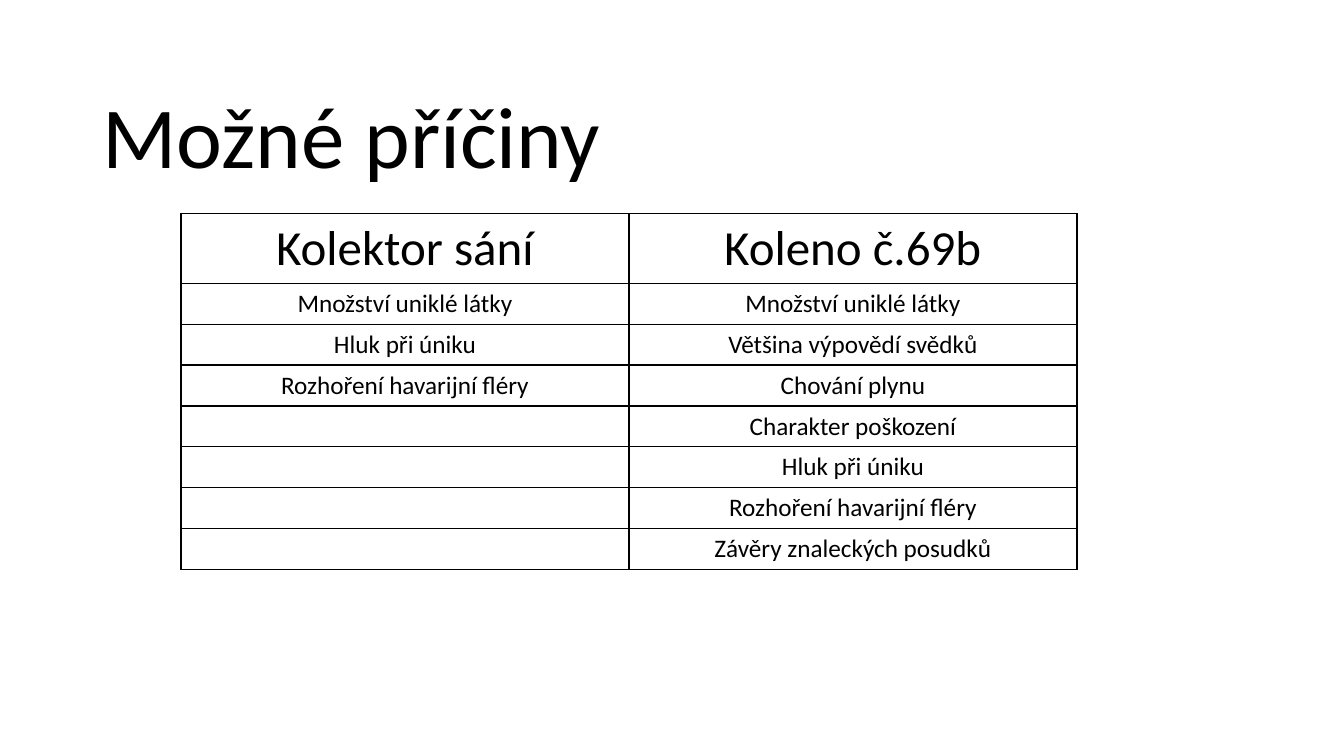
from itertools import zip_longest

from lxml.etree import SubElement
from pptx import Presentation
from pptx.dml.color import RGBColor
from pptx.enum.text import MSO_ANCHOR, MSO_AUTO_SIZE, PP_ALIGN
from pptx.oxml.ns import qn
from pptx.util import Pt

COLORS = {"text": "000000", "border": "000000", "cell": "FFFFFF"}

CAUSES = {
    "Kolektor sání": [
        "Množství uniklé látky",
        "Hluk při úniku",
        "Rozhoření havarijní fléry",
    ],
    "Koleno č.69b": [
        "Množství uniklé látky",
        "Většina výpovědí svědků",
        "Chování plynu",
        "Charakter poškození",
        "Hluk při úniku",
        "Rozhoření havarijní fléry",
        "Závěry znaleckých posudků",
    ],
}


class SlideBuilder:
    font_name = "Calibri"
    title_size = 62.1
    heading_size = 35
    body_size = 18
    border_width = 1

    def __init__(self, slide):
        self.slide = slide

    def format_text(self, paragraph, size, alignment):
        paragraph.alignment = alignment
        for font in [paragraph.font] + [run.font for run in paragraph.runs]:
            font.name = self.font_name
            font.size = Pt(size)
            font.color.rgb = RGBColor.from_string(COLORS["text"])

    def title(self, wording, left, top, width, height):
        heading = self.slide.shapes.title
        heading.left, heading.top = Pt(left), Pt(top)
        heading.width, heading.height = Pt(width), Pt(height)
        frame = heading.text_frame
        frame.text = wording
        frame.word_wrap = True
        frame.auto_size = MSO_AUTO_SIZE.NONE
        frame.vertical_anchor = MSO_ANCHOR.MIDDLE
        frame.paragraphs[0].line_spacing = 0.9
        self.format_text(frame.paragraphs[0], self.title_size, PP_ALIGN.LEFT)

    def cell(self, cell, wording, size):
        cell.text = wording
        cell.vertical_anchor = MSO_ANCHOR.MIDDLE
        self.format_text(cell.text_frame.paragraphs[0], size, PP_ALIGN.CENTER)
        properties = cell._tc.get_or_add_tcPr()
        for side in ("a:lnL", "a:lnR", "a:lnT", "a:lnB"):
            border = SubElement(properties, qn(side), w=str(Pt(self.border_width)))
            fill = SubElement(border, qn("a:solidFill"))
            SubElement(fill, qn("a:srgbClr"), val=COLORS["border"])
        cell.fill.solid()
        cell.fill.fore_color.rgb = RGBColor.from_string(COLORS["cell"])

    def table(self, columns, left, top, width, heading_height, row_height):
        rows = [tuple(columns), *zip_longest(*columns.values(), fillvalue="")]
        height = heading_height + row_height * (len(rows) - 1)
        table = self.slide.shapes.add_table(
            len(rows), len(columns), Pt(left), Pt(top), Pt(width), Pt(height)
        ).table
        table.first_row = False
        table.horz_banding = False
        for column in table.columns:
            column.width = Pt(width / len(columns))
        for index, wordings in enumerate(rows):
            is_heading = index == 0
            table.rows[index].height = Pt(heading_height if is_heading else row_height)
            size = self.heading_size if is_heading else self.body_size
            for position, wording in enumerate(wordings):
                self.cell(table.cell(index, position), wording, size)


def main():
    presentation = Presentation()
    presentation.slide_width, presentation.slide_height = Pt(960), Pt(540)
    slide = presentation.slides.add_slide(presentation.slide_layouts[5])
    builder = SlideBuilder(slide)
    builder.title("Možné příčiny", 66, 48, 828, 104.4)
    builder.table(CAUSES, 129.3, 152.4, 640, 50, 29.2)
    presentation.save("out.pptx")


if __name__ == "__main__":
    main()
